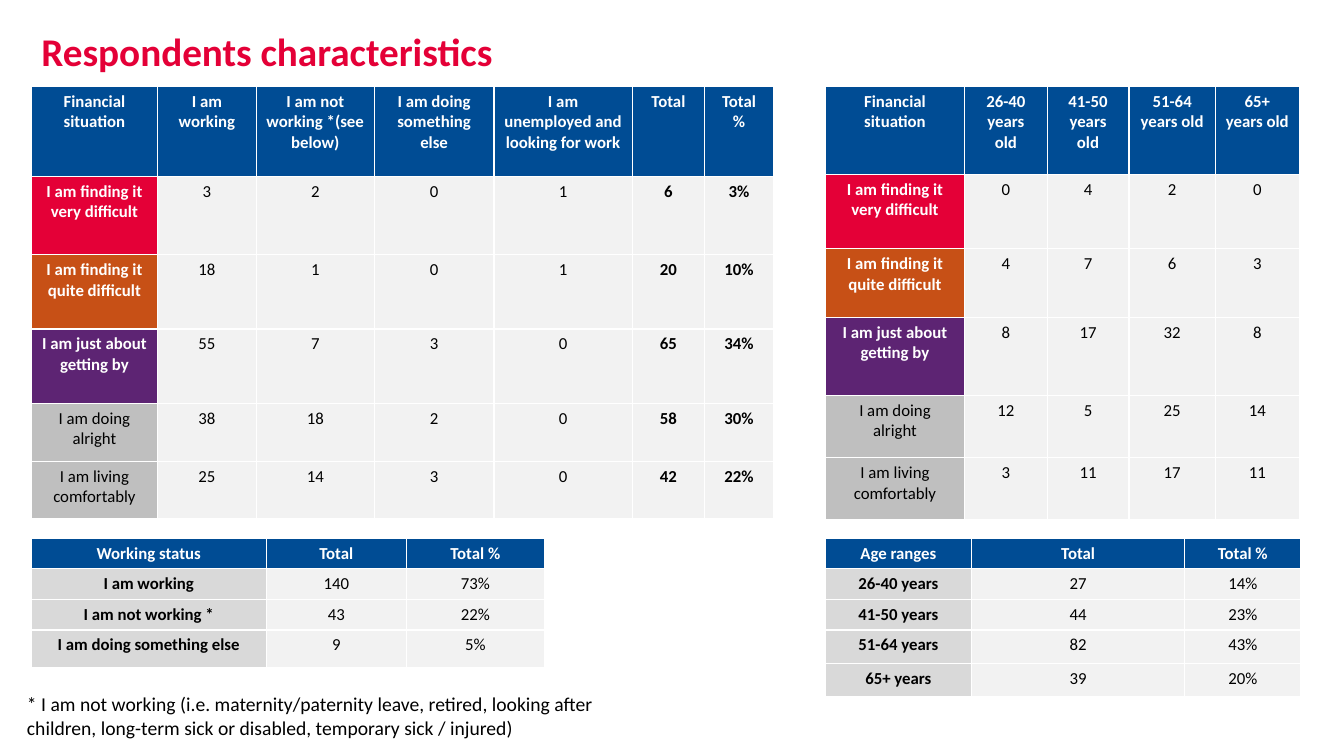
from dataclasses import dataclass

from pptx import Presentation
from pptx.dml.color import RGBColor
from pptx.enum.text import MSO_ANCHOR, MSO_AUTO_SIZE, PP_ALIGN
from pptx.util import Cm, Pt

CENTER, LEFT = PP_ALIGN.CENTER, PP_ALIGN.LEFT
TOP = MSO_ANCHOR.TOP
NO_FIT, GROW = MSO_AUTO_SIZE.NONE, MSO_AUTO_SIZE.SHAPE_TO_FIT_TEXT
TITLE_ONLY = 5


@dataclass(frozen=True)
class Theme:
    font: str = "Calibri"
    title_size: int = 28
    note_size: int = 14
    table_size: int = 12
    white: str = "FFFFFF"
    black: str = "000000"
    red: str = "E40037"
    blue: str = "004C94"
    orange: str = "C75016"
    purple: str = "5D2473"
    mid_gray: str = "BFBFBF"
    label_gray: str = "D9D9D9"
    cell_gray: str = "F2F2F2"


@dataclass(frozen=True)
class Box:
    left: float
    top: float
    width: float
    height: float

    def lengths(self):
        return Cm(self.left), Cm(self.top), Cm(self.width), Cm(self.height)


THEME = Theme()

# Label styles by row: fill, text colour, bold
SITUATION_STYLES = [
    (THEME.red, THEME.white, True),
    (THEME.orange, THEME.white, True),
    (THEME.purple, THEME.white, True),
    (THEME.mid_gray, THEME.black, False),
    (THEME.mid_gray, THEME.black, False),
]
SUMMARY_STYLE = (THEME.label_gray, THEME.black, True)

SITUATIONS = [
    "I am finding it very difficult",
    "I am finding it quite difficult",
    "I am just about getting by",
    "I am doing alright",
    "I am living comfortably",
]
WORK_HEADS = ["Financial situation", "I am working", "I am not working *(see below)",
              "I am doing something else", "I am unemployed and looking for work",
              "Total", "Total %"]
WORK_VALUES = [
    [3, 2, 0, 1, 6, "3%"],
    [18, 1, 0, 1, 20, "10%"],
    [55, 7, 3, 0, 65, "34%"],
    [38, 18, 2, 0, 58, "30%"],
    [25, 14, 3, 0, 42, "22%"],
]
AGE_HEADS = ["Financial situation", "26-40 years old", "41-50 years old",
             "51-64 years old", "65+ years old"]
AGE_VALUES = [[0, 4, 2, 0], [4, 7, 6, 3], [8, 17, 32, 8], [12, 5, 25, 14], [3, 11, 17, 11]]
STATUS_ROWS = [
    ["Working status", "Total", "Total %"],
    ["I am working", 140, "73%"],
    ["I am not working *", 43, "22%"],
    ["I am doing something else", 9, "5%"],
]
RANGE_ROWS = [
    ["Age ranges", "Total", "Total %"],
    ["26-40 years", 27, "14%"],
    ["41-50 years", 44, "23%"],
    ["51-64 years", 82, "43%"],
    ["65+ years", 39, "20%"],
]
FOOTNOTE = ("* I am not working (i.e. maternity/paternity leave, retired, looking after "
            "children, long-term sick or disabled, temporary sick / injured)")


def write(frame, text, size, color, bold, align):
    frame.text = text
    para = frame.paragraphs[0]
    para.alignment = align
    for span in para.runs:
        span.font.name = THEME.font
        span.font.size = Pt(size)
        span.font.bold = bold
        span.font.color.rgb = RGBColor.from_string(color)


def add_title(page, box, text):
    title = page.shapes.title
    title.left, title.top, title.width, title.height = box.lengths()
    frame = title.text_frame
    frame.auto_size = NO_FIT
    frame.vertical_anchor = TOP
    frame.margin_bottom = 0
    write(frame, text, THEME.title_size, THEME.red, True, LEFT)


def add_footnote(page, box, text):
    frame = page.shapes.add_textbox(*box.lengths()).text_frame
    frame.word_wrap = True
    frame.auto_size = GROW
    write(frame, text, THEME.note_size, THEME.black, False, LEFT)


def cell_style(row, column, label_styles, bold_columns):
    if row == 0:
        return THEME.blue, THEME.white, True
    if column == 0:
        return label_styles[row - 1]
    return THEME.cell_gray, THEME.black, column in bold_columns


def add_grid(page, left, top, widths, heights, rows, label_styles, bold_columns=()):
    box = Box(left, top, sum(widths), sum(heights))
    table = page.shapes.add_table(len(rows), len(widths), *box.lengths()).table
    table.horz_banding = False
    for column, width in zip(table.columns, widths):
        column.width = Cm(width)
    for line, height in zip(table.rows, heights):
        line.height = Cm(height)
    for r, values in enumerate(rows):
        for c, value in enumerate(values):
            fill, color, bold = cell_style(r, c, label_styles, bold_columns)
            cell = table.cell(r, c)
            cell.fill.solid()
            cell.fill.fore_color.rgb = RGBColor.from_string(fill)
            write(cell.text_frame, str(value), THEME.table_size, color, bold, CENTER)


def situation_rows(heads, values):
    return [heads] + [[label, *line] for label, line in zip(SITUATIONS, values)]


def build_respondents(deck):
    page = deck.slides.add_slide(deck.slide_layouts[TITLE_ONLY])
    left, right, upper, lower = 0.79, 20.8, 2.18, 13.56

    add_title(page, Box(left, 0.56, 21.03, 2.06), "Respondents characteristics")

    # Financial situation by work and by age
    add_grid(page, left, upper, [3.18, 2.49, 2.97, 3.02, 3.48, 1.83, 1.73],
             [2.26, 1.98, 1.87, 1.87, 1.46, 1.46],
             situation_rows(WORK_HEADS, WORK_VALUES), SITUATION_STYLES, (5, 6))
    add_grid(page, right, upper, [3.51, 2.08, 2.06, 2.18, 2.11],
             [2.21, 1.88, 1.73, 1.96, 1.57, 1.57],
             situation_rows(AGE_HEADS, AGE_VALUES), SITUATION_STYLES)

    # Totals by working status and by age range
    add_grid(page, left, lower, [5.92, 3.53, 3.48], [0.76] * 3 + [0.94],
             STATUS_ROWS, [SUMMARY_STYLE] * 3)
    add_grid(page, right, lower, [3.68, 5.38, 2.92], [0.76] * 3 + [0.84] * 2,
             RANGE_ROWS, [SUMMARY_STYLE] * 4)

    add_footnote(page, Box(0.43, 17.32, 15.67, 1.45), FOOTNOTE)


def main():
    deck = Presentation()
    deck.slide_width, deck.slide_height = Cm(33.87), Cm(19.05)
    build_respondents(deck)
    deck.save("out.pptx")


if __name__ == "__main__":
    main()
